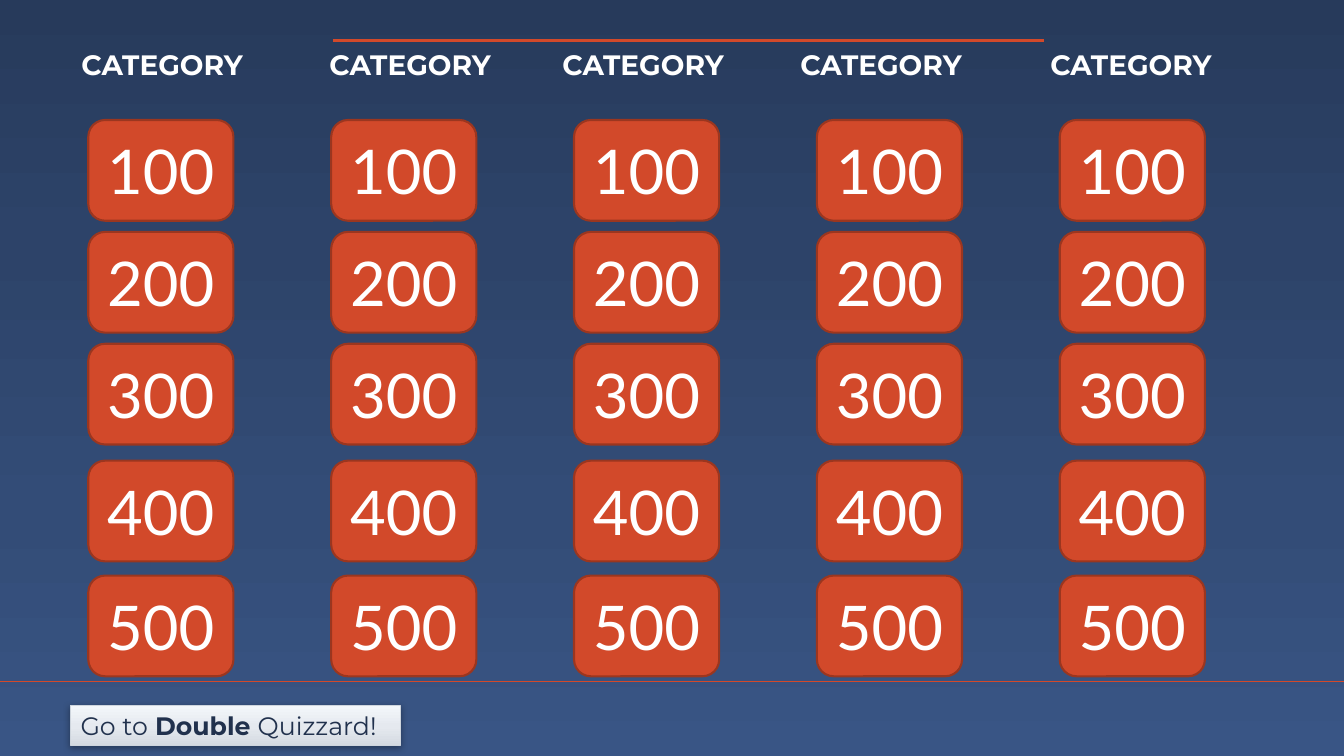
from dataclasses import dataclass

from lxml.etree import SubElement
from pptx import Presentation
from pptx.dml.color import RGBColor
from pptx.enum.shapes import MSO_CONNECTOR as CONN, MSO_SHAPE as SHAPE
from pptx.enum.text import MSO_ANCHOR as ANCHOR, MSO_AUTO_SIZE as FIT, PP_ALIGN as ALIGN
from pptx.oxml.ns import qn
from pptx.util import Inches, Pt


@dataclass(frozen=True)
class Theme:
    accent: str = "D2492A"
    accent_edge: str = "9B361F"
    light: str = "FFFFFF"
    dark: str = "21314D"
    button_edge: str = "CED5DD"
    shadow: str = "000000"
    backdrop: tuple = ((0, "273A5B"), (32, "2D4369"), (68, "334C77"), (100, "395585"))
    button: tuple = ((0, "D4DAE1"), (48, "E5E9EF"), (100, "F2F6FA"))
    value_font: str = "Lato"
    text_font: str = "Montserrat"
    value_size: int = 44
    heading_size: int = 20
    button_size: int = 18


@dataclass(frozen=True)
class Box:
    """Position and size in percent of the slide."""
    x: float
    y: float
    w: float
    h: float


@dataclass(frozen=True)
class Rule:
    """Horizontal line, in percent of the slide, with its weight in points."""
    start: float
    end: float
    y: float
    weight: float


@dataclass(frozen=True)
class Column:
    heading: str
    heading_x: float


@dataclass(frozen=True)
class Row:
    value: str
    y: float


T = Theme()
WIDTH, HEIGHT = Inches(13.33), Inches(7.5)
FIRST_TILE_X, COLUMN_PITCH = 6.57, 18.07
TILE_W, TILE_H = 10.8, 13.33
HEADING_Y, HEADING_W, HEADING_H = 5.6, 17.55, 5.87

RULES = [Rule(100, 0, 90.13, 1), Rule(24.76, 77.7, 5.33, 2)]
COLUMNS = [Column("CATEGORY", x) for x in (3.3, 21.75, 39.08, 56.78, 75.38)]
ROWS = [Row("100", 15.87), Row("200", 30.67), Row("300", 45.47),
        Row("400", 60.93), Row("500", 76.13)]
BUTTON = Box(5.25, 93.33, 24.53, 5.33)


def across(share: float) -> int:
    return round(WIDTH * share / 100)


def down(share: float) -> int:
    return round(HEIGHT * share / 100)


def place(box: Box) -> tuple:
    return across(box.x), down(box.y), across(box.w), down(box.h)


def rgb(color: str) -> RGBColor:
    return RGBColor.from_string(color)


def add_gradient(owner, fill, stops: tuple, angle: int) -> None:
    """Fill with any number of stops; the angle runs clockwise."""
    fill.gradient()
    fill.gradient_angle = -angle % 360
    stop_list = next(owner.element.iter(qn("a:gsLst")))
    for stop in list(stop_list):
        stop_list.remove(stop)
    for position, color in stops:
        stop = SubElement(stop_list, qn("a:gs"), pos=str(position * 1000))
        SubElement(stop, qn("a:srgbClr"), val=color)


def add_shadow(sp, color: str, alpha: int, blur: float, distance: float) -> None:
    sp.shadow.inherit = False
    effects = sp.element.spPr.find(qn("a:effectLst"))
    outer = SubElement(effects, qn("a:outerShdw"), blurRad=str(Pt(blur)),
                       dist=str(Pt(distance)), dir="5400000", rotWithShape="0")
    tint = SubElement(outer, qn("a:srgbClr"), val=color)
    SubElement(tint, qn("a:alpha"), val=str(alpha * 1000))


def write(sp, *parts: str, font: str, size: int, color: str, align=ALIGN.CENTER,
          anchor=ANCHOR.TOP, bold: tuple = (), grow: bool = False) -> None:
    """Write the parts as runs; bold holds the indexes of the bold ones."""
    tf = sp.text_frame
    tf.word_wrap = True
    tf.vertical_anchor = anchor
    tf.auto_size = FIT.SHAPE_TO_FIT_TEXT if grow else FIT.NONE
    p = tf.paragraphs[0]
    p.alignment = align
    for index, part in enumerate(parts):
        r = p.add_run()
        r.text = part
        r.font.name, r.font.size = font, Pt(size)
        r.font.bold = index in bold
        r.font.color.rgb = rgb(color)


def add_rule(s, rule: Rule) -> None:
    y = down(rule.y)
    line = s.shapes.add_connector(CONN.STRAIGHT, across(rule.start), y, across(rule.end), y)
    line.line.color.rgb = rgb(T.accent)
    line.line.width = Pt(rule.weight)
    SubElement(line.element.spPr, qn("a:effectLst"))


def add_tile(s, box: Box, value: str) -> None:
    sp = s.shapes.add_shape(SHAPE.ROUNDED_RECTANGLE, *place(box))
    sp.shadow.inherit = False
    sp.fill.solid()
    sp.fill.fore_color.rgb = rgb(T.accent)
    sp.line.color.rgb = rgb(T.accent_edge)
    sp.line.width = Pt(1.5)
    write(sp, value, font=T.value_font, size=T.value_size, color=T.light,
          anchor=ANCHOR.MIDDLE)


def add_heading(s, column: Column) -> None:
    box = Box(column.heading_x, HEADING_Y, HEADING_W, HEADING_H)
    write(s.shapes.add_textbox(*place(box)), column.heading, font=T.text_font,
          size=T.heading_size, color=T.light, bold=(0,), grow=True)


def add_button(s, box: Box) -> None:
    sp = s.shapes.add_shape(SHAPE.RECTANGLE, *place(box))
    add_gradient(sp, sp.fill, T.button, 270)
    sp.line.color.rgb = rgb(T.button_edge)
    sp.line.width = Pt(1)
    add_shadow(sp, T.shadow, alpha=32, blur=5, distance=1)
    write(sp, "Go to", " Double ", "Quizzard!", font=T.text_font, size=T.button_size,
          color=T.dark, align=ALIGN.LEFT, bold=(1,), grow=True)


def main() -> None:
    prs = Presentation()
    prs.slide_width, prs.slide_height = WIDTH, HEIGHT
    s = prs.slides.add_slide(prs.slide_layouts[6])

    # Backdrop and rules
    add_gradient(s, s.background.fill, T.backdrop, 90)
    for rule in RULES:
        add_rule(s, rule)

    # Board of values, column by column
    for index in range(len(COLUMNS)):
        x = FIRST_TILE_X + index * COLUMN_PITCH
        for row in ROWS:
            add_tile(s, Box(x, row.y, TILE_W, TILE_H), row.value)

    # Category headings
    for column in COLUMNS:
        add_heading(s, column)

    # Button to the next round
    add_button(s, BUTTON)
    prs.save("out.pptx")


if __name__ == "__main__":
    main()
